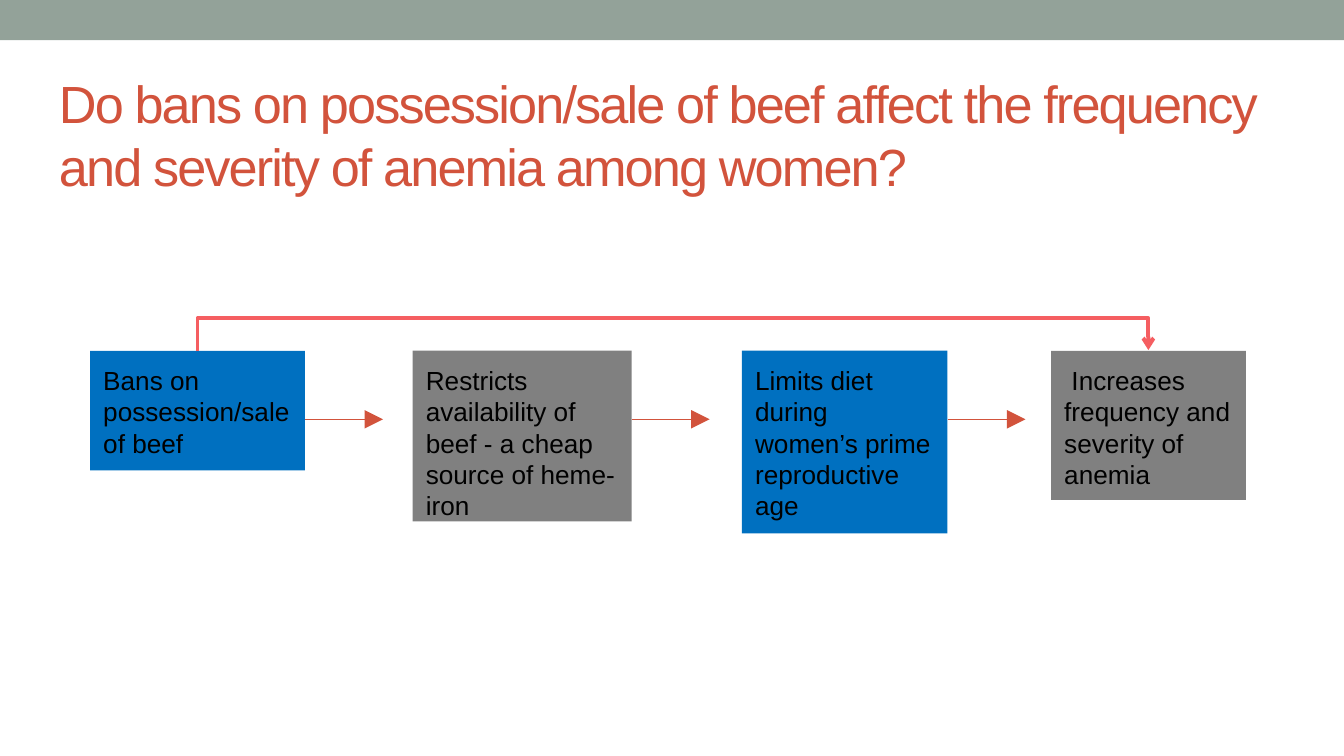
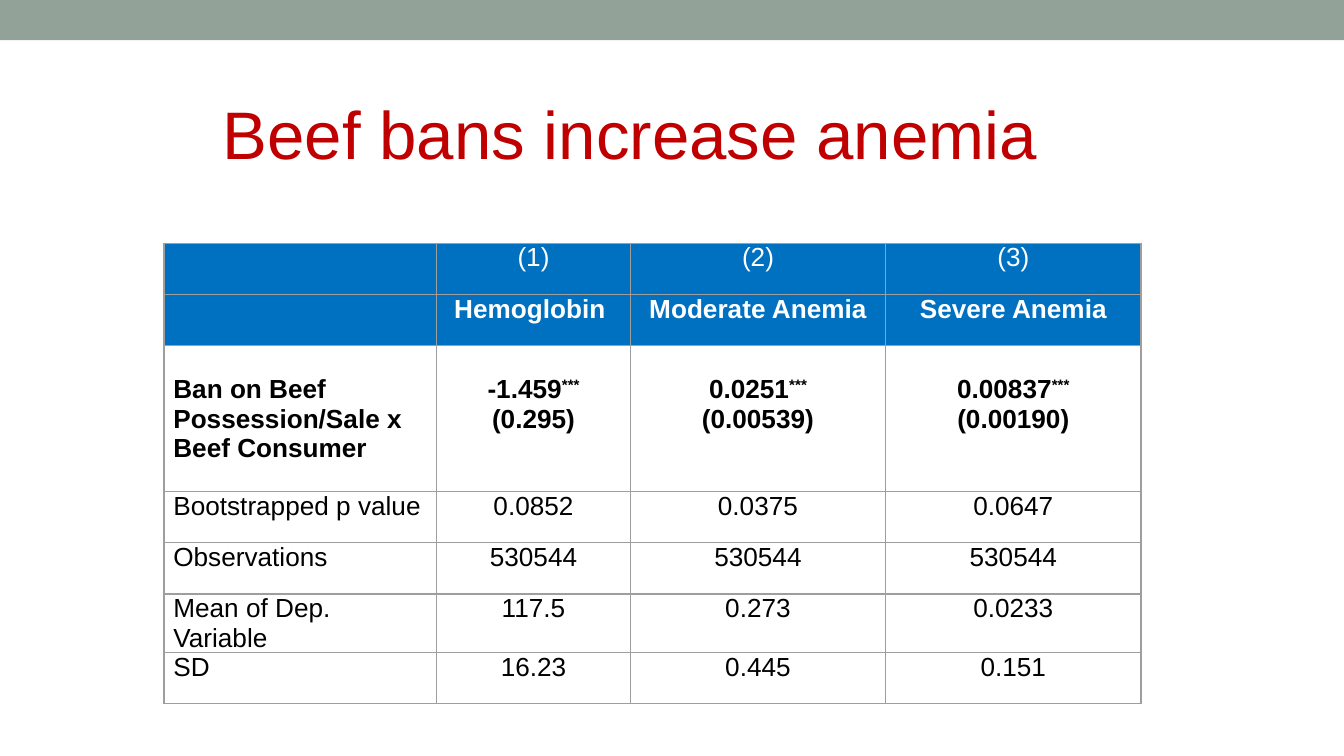
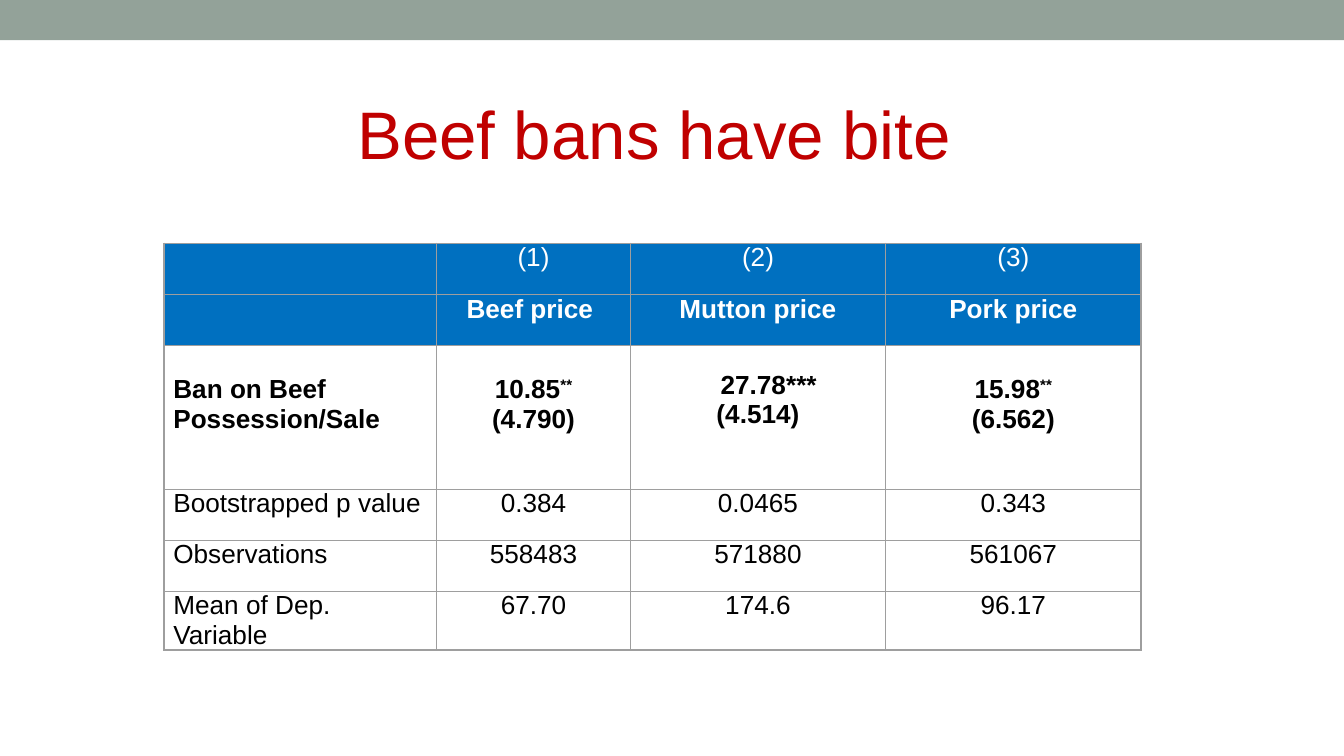
from lxml import etree
from pptx import Presentation
from pptx.dml.color import RGBColor
from pptx.enum.shapes import MSO_CONNECTOR, MSO_SHAPE
from pptx.enum.text import MSO_ANCHOR, PP_ALIGN
from pptx.oxml.ns import qn
from pptx.util import Inches, Pt

RECT = MSO_SHAPE.RECTANGLE
STRAIGHT, ELBOW = MSO_CONNECTOR.STRAIGHT, MSO_CONNECTOR.ELBOW
LEFT, CENTER = PP_ALIGN.LEFT, PP_ALIGN.CENTER
TOP = MSO_ANCHOR.TOP

FONT = "Arial"
COLORS = {
    "band": "93A299", "question": "D2533C", "finding": "C00000",
    "blue": "0070C0", "gray": "808080", "loop": "F55E61",
    "border": "9E9E9E", "white": "FFFFFF", "black": "000000",
}
SLIDE_WIDTH = 10
SLIDE_HEIGHT = SLIDE_WIDTH * 9 / 16
COLUMN_WIDTHS = [2.03, 1.44, 1.9, 1.9]
HEADER_ROWS = 2
ESTIMATE_ROW = 2
ROW_HEIGHT = 0.38


def rgb(name):
    return RGBColor.from_string(COLORS[name])


def style_run(run, size, color, bold=False):
    run.font.name = FONT
    run.font.size = Pt(size)
    run.font.bold = bold
    run.font.color.rgb = rgb(color)


def add_box(slide, left, top, width, height, color):
    box = slide.shapes.add_shape(
        RECT, Inches(left), Inches(top), Inches(width), Inches(height))
    box.shadow.inherit = False
    box.fill.solid()
    box.fill.fore_color.rgb = rgb(color)
    box.line.fill.background()
    return box


def set_text(shape, text, size, color, inset=0.1):
    frame = shape.text_frame
    frame.word_wrap = True
    frame.vertical_anchor = TOP
    frame.margin_left = frame.margin_right = Inches(0.1)
    frame.margin_top = frame.margin_bottom = Inches(inset)
    frame.text = text
    paragraph = frame.paragraphs[0]
    paragraph.alignment = LEFT
    style_run(paragraph.runs[0], size, color)
    return paragraph


def add_slide(prs):
    """Blank slide with the shared top band."""
    slide = prs.slides.add_slide(prs.slide_layouts[6])
    add_box(slide, 0, 0, SLIDE_WIDTH, 0.3, "band")
    return slide


def add_question_title(slide, text):
    title = slide.shapes.add_textbox(
        Inches(0.34), Inches(0.43), Inches(9.32), Inches(0.68))
    paragraph = set_text(title, text, 28, "question")
    paragraph.runs[0]._r.get_or_add_rPr().set("spc", "-100")


def add_finding_title(slide, text, indent=0):
    title = slide.shapes.add_textbox(
        Inches(1.56), Inches(0.64), Inches(6.91), Inches(0.71))
    paragraph = set_text(title, text, 36, "finding", inset=0.05)
    set_indent(paragraph, indent)


def set_indent(paragraph, indent):
    if indent:
        properties = paragraph._p.get_or_add_pPr()
        properties.set("marL", str(Inches(indent)))
        properties.set("indent", "0")


def add_arrow(slide, kind, start, end, color, width, head, head_size):
    arrow = slide.shapes.add_connector(
        kind, *(Inches(value) for value in (*start, *end)))
    arrow.line.color.rgb = rgb(color)
    arrow.line.width = Pt(width)
    line = arrow.line._get_or_add_ln()
    etree.SubElement(line, qn("a:tailEnd"), type=head, w=head_size, len=head_size)
    etree.SubElement(arrow._element.spPr, qn("a:effectLst"))
    return arrow


def add_loop_arrow(slide, start_x, end_x, y, rise):
    """Elbow arrow that rises, runs across and drops at the same level."""
    middle, half_span, half_depth = (start_x + end_x) / 2, (end_x - start_x) / 2, 0.005
    loop = add_arrow(slide, ELBOW, (middle + half_depth, y + half_span),
                     (middle - half_depth, y - half_span),
                     "loop", 2.08, "arrow", "med")
    properties = loop._element.spPr
    properties.find(qn("a:xfrm")).set("rot", "5400000")
    adjustments = properties.find(qn("a:prstGeom")).find(qn("a:avLst"))
    bend = round(rise / (2 * half_depth) * 100000)
    etree.SubElement(adjustments, qn("a:gd"), name="adj1", fmla=f"val {bend}")


def set_borders(cell):
    properties = cell._tc.get_or_add_tcPr()
    for position, side in enumerate(("a:lnL", "a:lnR", "a:lnT", "a:lnB")):
        line = etree.Element(qn(side), w=str(Pt(0.75)))
        fill = etree.SubElement(line, qn("a:solidFill"))
        etree.SubElement(fill, qn("a:srgbClr"), val=COLORS["border"])
        properties.insert(position, line)


def fill_cell(cell, text, row, column):
    """Write a cell; '^' separates a value from its raised stars."""
    header = row < HEADER_ROWS
    cell.margin_left = cell.margin_right = Inches(0.07)
    cell.margin_top = Inches(0.22 if row == ESTIMATE_ROW else 0)
    cell.margin_bottom = 0
    if header:
        cell.fill.solid()
        cell.fill.fore_color.rgb = rgb("blue")
    else:
        cell.fill.background()
    set_borders(cell)

    cell.text_frame.text = text.replace("^", "")
    for paragraph, content in zip(cell.text_frame.paragraphs, text.split("\n")):
        paragraph.alignment = CENTER if column else LEFT
        paragraph.font.size = Pt(14)
        value, _, stars = content.partition("^")
        if stars:
            paragraph.runs[0].text = value
            raised = paragraph.add_run()
            raised.text = stars
            raised._r.get_or_add_rPr().set("baseline", "30000")
        for run in paragraph.runs:
            style_run(run, 14, "white" if header else "black",
                      bold=row in (1, ESTIMATE_ROW))


def add_results_table(slide, rows, estimate_height):
    heights = [estimate_height if row == ESTIMATE_ROW else ROW_HEIGHT
               for row in range(len(rows))]
    frame = slide.shapes.add_table(
        len(rows), len(COLUMN_WIDTHS), Inches(1.22), Inches(1.81),
        Inches(sum(COLUMN_WIDTHS)), Inches(sum(heights)))
    table = frame.table
    table.horz_banding = False
    for column, width in zip(table.columns, COLUMN_WIDTHS):
        column.width = Inches(width)
    for row, (texts, height) in enumerate(zip(rows, heights)):
        table.rows[row].height = Inches(height)
        for column, text in enumerate(texts):
            fill_cell(table.cell(row, column), text, row, column)
    return table


def build_pathway(prs):
    slide = add_slide(prs)
    add_question_title(slide, "Do bans on possession/sale of beef affect the "
                              "frequency and severity of anemia among women?")
    # Causal chain: left, width, height, color, text
    steps = [
        (0.67, 1.6, 0.89, "blue", "Bans on possession/sale of beef"),
        (3.07, 1.63, 1.27, "gray",
         "Restricts availability of beef - a cheap source of heme-iron"),
        (5.52, 1.53, 1.36, "blue",
         "Limits diet during women’s prime reproductive age"),
        (7.82, 1.45, 1.11, "gray", " Increases frequency and severity of anemia"),
    ]
    step_top, arrow_y, arrow_length = 2.61, 3.12, 0.58
    for left, width, height, color, text in steps:
        step = add_box(slide, left, step_top, width, height, color)
        set_text(step, text, 14, "black")
    for left, width, *_ in steps[:-1]:
        right = left + width
        add_arrow(slide, STRAIGHT, (right, arrow_y), (right + arrow_length, arrow_y),
                  "question", 0.75, "triangle", "lg")
    # Direct effect from first step to last
    first_x, last_x = (left + width / 2 for left, width, *_ in (steps[0], steps[-1]))
    add_loop_arrow(slide, first_x, last_x, step_top, 0.25)


def build_anemia_results(prs):
    slide = add_slide(prs)
    add_results_table(slide, [
        ("", "(1)", "(2)", "(3)"),
        ("", "Hemoglobin ", "Moderate Anemia", "Severe Anemia"),
        ("Ban on Beef Possession/Sale x Beef Consumer", "-1.459^***\n(0.295)",
         "0.0251^***\n(0.00539)", "0.00837^***\n(0.00190)"),
        ("Bootstrapped p value", "0.0852", "0.0375", "0.0647"),
        ("Observations", "530544", "530544", "530544"),
        ("Mean of Dep. Variable", "117.5", "0.273", "0.0233"),
        ("SD", "16.23", "0.445", "0.151"),
    ], estimate_height=1.09)
    add_finding_title(slide, "Beef bans increase anemia")


def build_price_results(prs):
    slide = add_slide(prs)
    prices = add_results_table(slide, [
        ("", "(1)", "(2)", "(3)"),
        ("", "Beef price ", "Mutton price", "Pork price"),
        ("Ban on Beef Possession/Sale", "10.85^**\n(4.790)",
         "27.78***\n(4.514)", "15.98^**\n(6.562)"),
        ("Bootstrapped p value", "0.384", "0.0465", "0.343"),
        ("Observations", "558483", "571880", "561067"),
        ("Mean of Dep. Variable", "67.70", "174.6", "96.17"),
    ], estimate_height=1.07)
    # The mutton estimate sits slightly higher and to the right
    mutton = prices.cell(ESTIMATE_ROW, 2)
    mutton.margin_top = Inches(0.19)
    set_indent(mutton.text_frame.paragraphs[0], 0.16)
    add_finding_title(slide, "Beef bans have bite", indent=1)


def main():
    prs = Presentation()
    prs.slide_width, prs.slide_height = Inches(SLIDE_WIDTH), Inches(SLIDE_HEIGHT)
    build_pathway(prs)
    build_anemia_results(prs)
    build_price_results(prs)
    prs.save("out.pptx")


if __name__ == "__main__":
    main()
